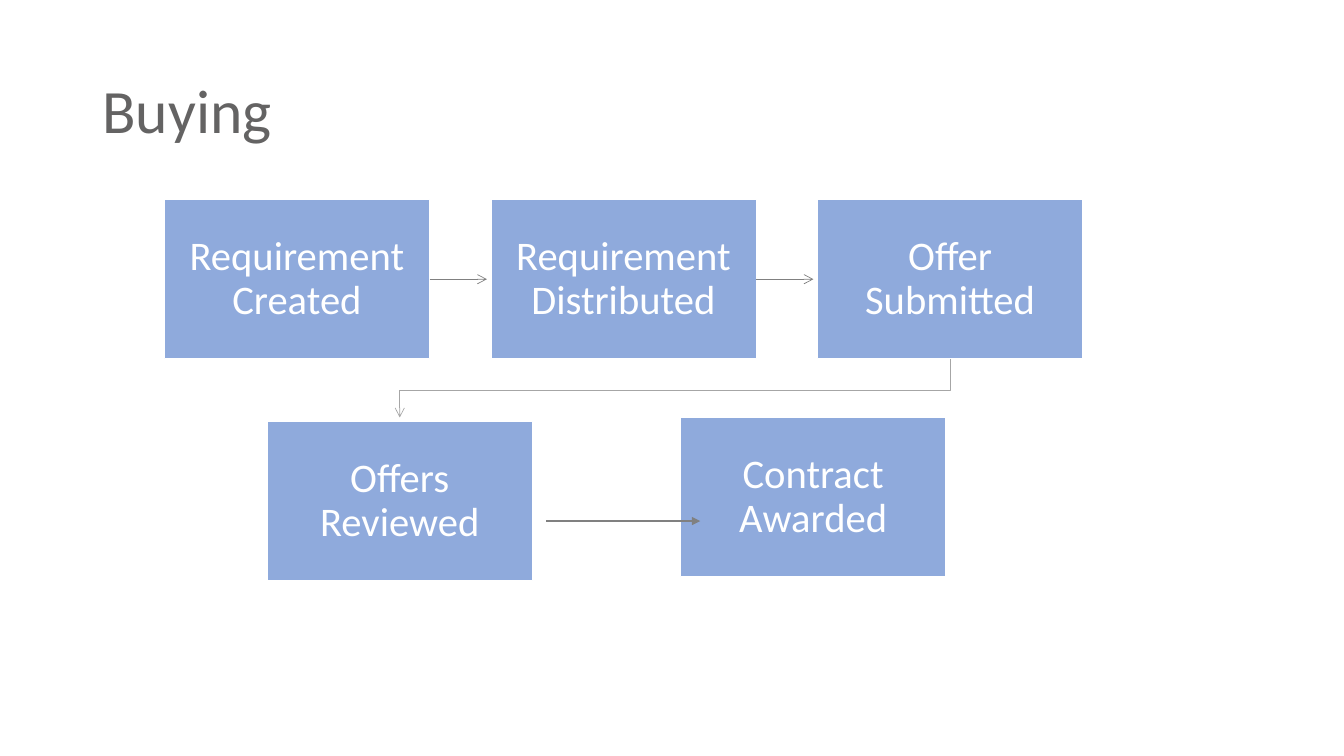
from lxml.etree import SubElement
from pptx import Presentation
from pptx.dml.color import RGBColor
from pptx.enum.shapes import MSO_CONNECTOR, MSO_SHAPE
from pptx.enum.text import MSO_ANCHOR, MSO_AUTO_SIZE, PP_ALIGN
from pptx.oxml.ns import qn
from pptx.util import Cm, Pt

COLORS = {
    "title": "646363",
    "box": "8FAADC",
    "white": "FFFFFF",
    "arrow": "808080",
    "elbow": "A6A6A6",
}
BOX_W, BOX_H = Cm(6.69), Cm(4.01)
ROW_LEFT, ROW_TOP, ROW_STEP = Cm(4.14), Cm(5.03), Cm(8.23)
ARROW_GAP = Cm(0.1)


def rgb(name):
    return RGBColor.from_string(COLORS[name])


def set_text(sp, text, size, color, align, inset=None):
    tf = sp.text_frame
    tf.word_wrap = True
    tf.auto_size = MSO_AUTO_SIZE.NONE
    tf.vertical_anchor = MSO_ANCHOR.MIDDLE
    if inset is not None:
        tf.margin_left = tf.margin_right = inset
        tf.margin_top = tf.margin_bottom = inset
    p = tf.paragraphs[0]
    p.alignment = align
    p.line_spacing = 0.9
    r = p.add_run()
    r.text = text
    r.font.name = "Calibri"
    r.font.size = Pt(size)
    r.font.color.rgb = rgb(color)


def add_box(slide, text, left, top):
    sp = slide.shapes.add_shape(MSO_SHAPE.RECTANGLE, left, top, BOX_W, BOX_H)
    sp.shadow.inherit = False
    sp.fill.solid()
    sp.fill.fore_color.rgb = rgb("box")
    sp.line.color.rgb = rgb("white")
    sp.line.width = Pt(1)
    set_text(sp, text, 29, "white", PP_ALIGN.CENTER, inset=Cm(0.57))
    return sp


def style_arrow(sp, color, width, head):
    """Set the line of a connector or outline and put an arrowhead at its end."""
    sp.line.color.rgb = rgb(color)
    sp.line.width = Pt(width)
    ln = sp.line._get_or_add_ln()
    SubElement(ln, qn("a:tailEnd"), type=head)


def add_arrow(slide, x1, x2, y, width, head):
    cxn = slide.shapes.add_connector(MSO_CONNECTOR.STRAIGHT, x1, y, x2, y)
    style_arrow(cxn, "arrow", width, head)
    SubElement(cxn._element.spPr, qn("a:effectLst"))
    return cxn


def add_elbow(slide, source, target):
    """Lead from the bottom of one box to just above the top of another."""
    x1 = source.left + BOX_W // 2
    x2 = target.left + BOX_W // 2
    y1 = source.top + BOX_H
    y2 = target.top - ARROW_GAP
    bend = (y1 + target.top) // 2
    builder = slide.shapes.build_freeform(x1, y1)
    builder.add_line_segments([(x1, bend), (x2, bend), (x2, y2)], close=False)
    sp = builder.convert_to_shape()
    sp.shadow.inherit = False
    sp.fill.background()
    style_arrow(sp, "elbow", 0.5, "arrow")


def main():
    prs = Presentation()
    prs.slide_width, prs.slide_height = Cm(33.87), Cm(19.05)
    slide = prs.slides.add_slide(prs.slide_layouts[5])

    title = slide.shapes.title
    title.left, title.top = Cm(2.33), Cm(1.01)
    title.width, title.height = Cm(29.21), Cm(3.68)
    set_text(title, "Buying", 44, "title", PP_ALIGN.LEFT)

    steps = ["Requirement Created", "Requirement Distributed", "Offer Submitted"]
    top_row = [add_box(slide, text, ROW_LEFT + i * ROW_STEP, ROW_TOP)
               for i, text in enumerate(steps)]
    reviewed = add_box(slide, "Offers Reviewed", Cm(6.73), Cm(10.62))
    add_box(slide, "Contract Awarded", Cm(17.15), Cm(10.52))

    for box, following in zip(top_row, top_row[1:]):
        cxn = add_arrow(slide, box.left + BOX_W, following.left - ARROW_GAP,
                        ROW_TOP + BOX_H // 2, 0.5, "arrow")
        cxn.begin_connect(box, 3)
    add_elbow(slide, top_row[-1], reviewed)
    add_arrow(slide, Cm(13.77), Cm(17.65), Cm(13.13), 1, "triangle")

    prs.save("out.pptx")


if __name__ == "__main__":
    main()
